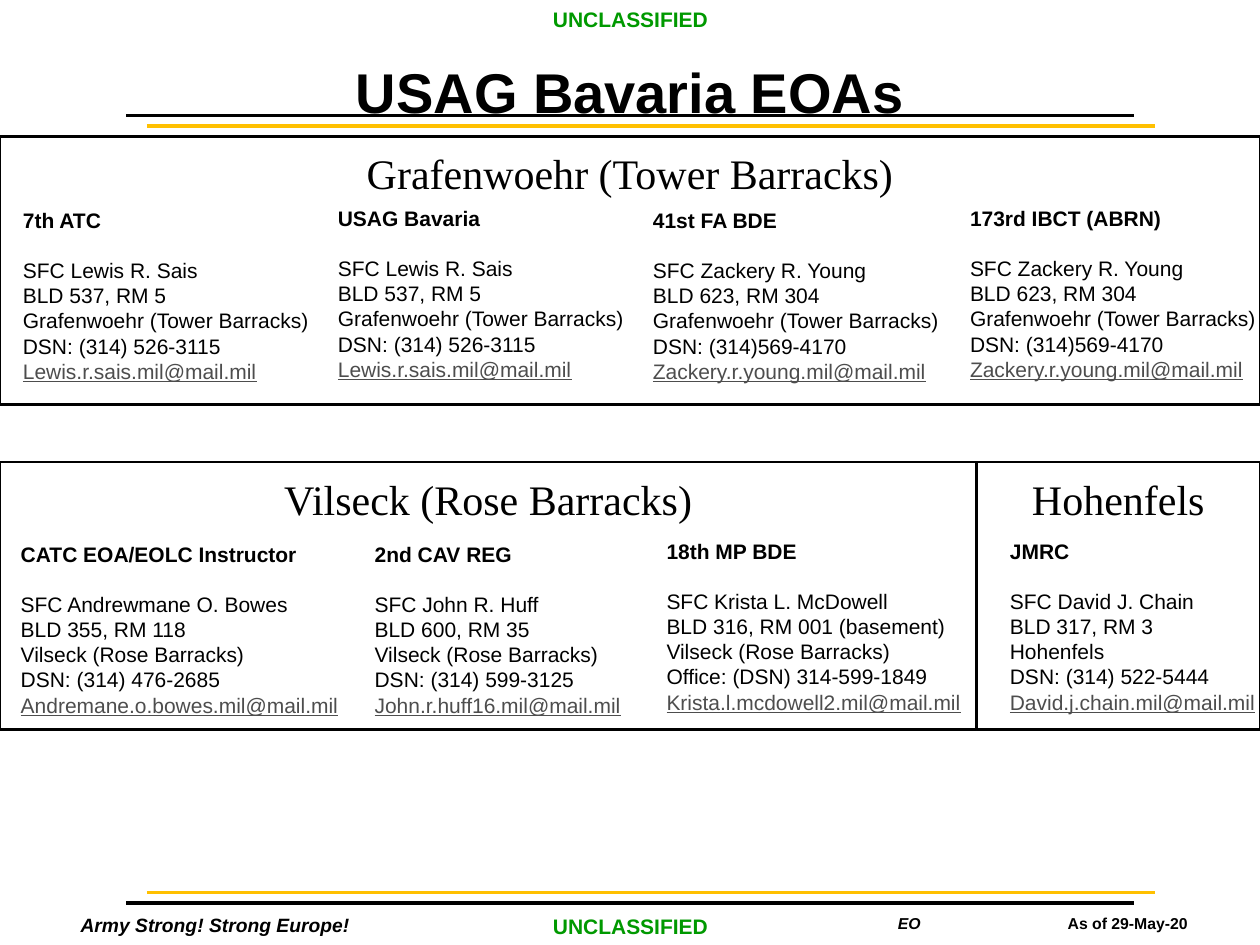
"""Build the USAG Bavaria EOA contact slide on a grid of twelfths of an inch."""
from lxml import etree
from pptx import Presentation
from pptx import util as u
from pptx.dml.color import RGBColor
from pptx.enum import shapes, text
from pptx.oxml import ns

BLACK = RGBColor(0x00, 0x00, 0x00)
GOLD = RGBColor(0xFF, 0xC0, 0x00)
GREEN = RGBColor(0x00, 0x99, 0x00)
GREY = RGBColor(0x4D, 0x4D, 0x4D)
CENTER, LEFT = text.PP_ALIGN.CENTER, text.PP_ALIGN.LEFT

deck = Presentation()
deck.slide_width, deck.slide_height = u.Inches(10), u.Inches(7.5)
page = deck.slides.add_slide(deck.slide_layouts[5])
GRID = deck.slide_width / 120


def grid(*cells):
    return [round(cell * GRID) for cell in cells]


def write(para, words, size, align=CENTER, color=BLACK, **style):
    para.alignment = align
    span = para.add_run()
    span.text = words
    span.font.color.rgb = color
    for name, value in {"name": "Arial", "size": u.Pt(size), **style}.items():
        setattr(span.font, name, value)


for left, row, color in [(12, 11, BLACK), (14, 12, GOLD), (12, 86, BLACK), (14, 85, GOLD)]:
    rule = page.shapes.add_connector(
        shapes.MSO_CONNECTOR.STRAIGHT, *grid(left, row, left + 96, row))
    rule.line.color.rgb = color
    rule.line.width = u.Pt(2)
    etree.SubElement(rule._element.spPr, ns.qn("a:effectLst"))

title = page.shapes.title
title.left, title.top, title.width, title.height = grid(0, 4.4, 120, 7.6)
frame = title.text_frame
frame.auto_size = text.MSO_AUTO_SIZE.NONE
frame.vertical_anchor = text.MSO_ANCHOR.TOP
frame.margin_top = u.Inches(0.09)
write(frame.paragraphs[0], "USAG Bavaria EOAs", 32, bold=True)

marks = [
    ("Army Strong! Strong Europe!", (2, 86.4, 37, 3.5), 11, BLACK, True),
    ("As of 29-May-20", (97.1, 86.4, 20.6, 3), 9, BLACK, False),
    ("EO", (76.3, 86.4, 20.6, 3), 9, BLACK, True),
    ("UNCLASSIFIED", (51.4, 0, 17.3, 3.6), 12, GREEN, False),
    ("UNCLASSIFIED", (51.4, 86.4, 17.3, 3.6), 12, GREEN, False),
]
for words, place, size, color, italic in marks:
    box = page.shapes.add_textbox(*grid(*place))
    box.text_frame.word_wrap = True
    write(box.text_frame.paragraphs[0], words, size, color=color, bold=True, italic=italic)

sites = [
    ("Grafenwoehr (Tower Barracks)", 0, 13, 120),
    ("Vilseck (Rose Barracks)", 0, 44, 93),
    ("Hohenfels", 93, 44, 27),
]
for name, left, top, width in sites:
    box = page.shapes.add_shape(
        shapes.MSO_SHAPE.RECTANGLE, *grid(left, top, width, 25.5))
    box.shadow.inherit = False
    box.fill.background()
    box.line.color.rgb = BLACK
    box.line.width = u.Pt(1.5)
    frame = box.text_frame
    frame.word_wrap = True
    frame.vertical_anchor = text.MSO_ANCHOR.TOP
    frame.margin_top = u.Inches(0.09)
    write(frame.paragraphs[0], name, 24, name="Times New Roman")

TOWER, ROSE = sites[0][0], sites[1][0]
contacts = [
    (1, 19.2, 35, "7th ATC", "SFC Lewis R. Sais", "BLD 537, RM 5", TOWER,
     "DSN: (314) 526-3115", "Lewis.r.sais.mil@mail.mil"),
    (31, 19, 35, "USAG Bavaria", "SFC Lewis R. Sais", "BLD 537, RM 5", TOWER,
     "DSN: (314) 526-3115", "Lewis.r.sais.mil@mail.mil"),
    (61, 19.2, 29.9, "41st FA BDE", "SFC Zackery R. Young", "BLD 623, RM 304", TOWER,
     "DSN: (314)569-4170", "Zackery.r.young.mil@mail.mil"),
    (91.2, 19, 29.9, "173rd IBCT (ABRN)", "SFC Zackery R. Young", "BLD 623, RM 304", TOWER,
     "DSN: (314)569-4170", "Zackery.r.young.mil@mail.mil"),
    (0.8, 51, 35, "CATC EOA/EOLC Instructor", "SFC Andrewmane O. Bowes", "BLD 355, RM 118", ROSE,
     "DSN: (314) 476-2685", "Andremane.o.bowes.mil@mail.mil"),
    (34.5, 51, 26.6, "2nd CAV REG", "SFC John R. Huff", "BLD 600, RM 35", ROSE,
     "DSN: (314) 599-3125", "John.r.huff16.mil@mail.mil"),
    (62.3, 50.7, 31.2, "18th MP BDE", "SFC Krista L. McDowell", "BLD 316, RM 001 (basement)", ROSE,
     "Office: (DSN) 314-599-1849", "Krista.l.mcdowell2.mil@mail.mil"),
    (95, 50.7, 26.5, "JMRC", "SFC David J. Chain", "BLD 317, RM 3", "Hohenfels",
     "DSN: (314) 522-5444", "David.j.chain.mil@mail.mil"),
]
for left, top, width, unit, person, *details, email in contacts:
    box = page.shapes.add_textbox(*grid(left, top, width, 18.1))
    frame = box.text_frame
    frame.word_wrap = True
    write(frame.paragraphs[0], unit, 12, LEFT, bold=True)
    para = frame.add_paragraph()
    para.space_before = u.Pt(14)
    write(para, person, 12, LEFT)
    for detail in details:
        write(frame.add_paragraph(), detail, 12, LEFT)
    write(frame.add_paragraph(), email, 12, LEFT, GREY, underline=True)

deck.save("out.pptx")
